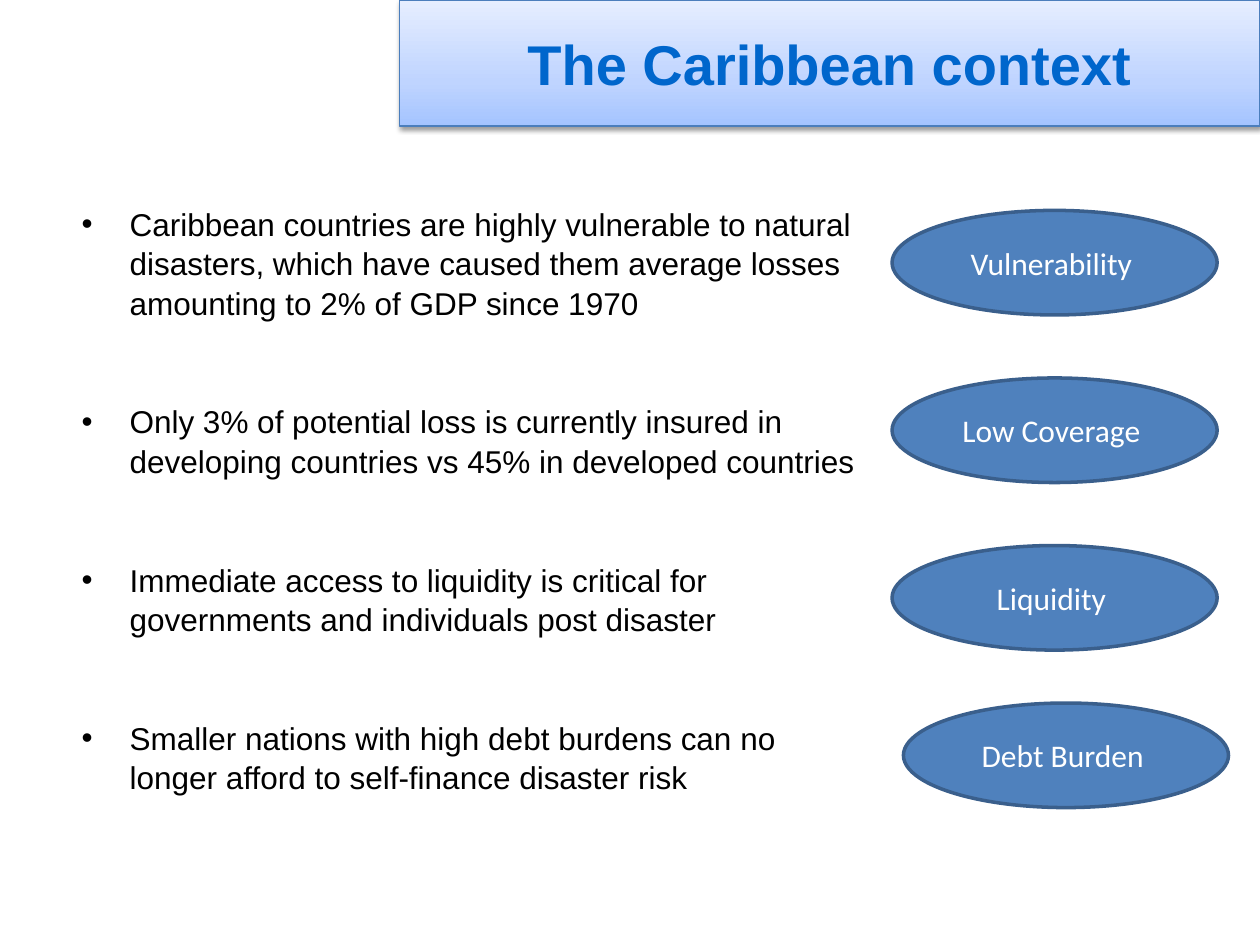
from lxml import etree
from pptx import Presentation
from pptx.dml.color import RGBColor
from pptx.enum.shapes import MSO_SHAPE
from pptx.enum.text import MSO_ANCHOR, PP_ALIGN
from pptx.oxml import parse_xml
from pptx.oxml.ns import nsdecls, qn
from pptx.util import Inches, Pt

TITLE_BLUE = RGBColor(0x00, 0x66, 0xCC)
BANNER_LINE = RGBColor(0x4B, 0x7E, 0xBC)
BANNER_STOPS = [(0, "A4C4FF"), (35, "BFD4FF"), (100, "E6EEFF")]
OVAL_FILL = RGBColor(0x4F, 0x81, 0xBD)
OVAL_LINE = RGBColor(0x3A, 0x5F, 0x8C)
WHITE = RGBColor(0xFF, 0xFF, 0xFF)
BLACK = RGBColor(0x00, 0x00, 0x00)

POINTS = [
    "Caribbean countries are highly vulnerable to natural disasters, "
    "which have caused them average losses amounting to 2% of GDP since 1970",
    "Only 3% of potential loss is currently insured in developing countries "
    "vs 45% in developed countries",
    "Immediate access to liquidity is critical for governments and "
    "individuals post disaster",
    "Smaller nations with high debt burdens can no longer afford to "
    "self-finance disaster risk",
]
# Label, left and top of each oval
THEMES = [
    ("Vulnerability", 7.08, 1.67),
    ("Low Coverage", 7.08, 3),
    ("Liquidity", 7.08, 4.33),
    ("Debt Burden", 7.17, 5.58),
]


def style_run(p, font, size, color, bold=False):
    f = p.runs[0].font
    f.name, f.size, f.bold = font, Pt(size), bold
    f.color.rgb = color


def add_banner(s, text, left, top, width, height):
    sp = s.shapes.add_shape(MSO_SHAPE.RECTANGLE, Inches(left), Inches(top),
                            Inches(width), Inches(height))
    sp.line.color.rgb = BANNER_LINE
    sp.line.width = Pt(0.75)

    # Upward gradient and soft drop shadow
    stops = "".join(f'<a:gs pos="{pos * 1000}"><a:srgbClr val="{color}"/></a:gs>'
                    for pos, color in BANNER_STOPS)
    sp_pr = sp._element.spPr
    sp_pr.find(qn("a:prstGeom")).addnext(parse_xml(
        f'<a:gradFill {nsdecls("a")} rotWithShape="1"><a:gsLst>{stops}</a:gsLst>'
        '<a:lin ang="16200000" scaled="0"/></a:gradFill>'))
    sp_pr.append(parse_xml(
        f'<a:effectLst {nsdecls("a")}><a:outerShdw blurRad="{Pt(3.1)}" '
        f'dist="{Pt(1.6)}" dir="5400000" rotWithShape="0">'
        '<a:srgbClr val="000000"><a:alpha val="38000"/></a:srgbClr>'
        '</a:outerShdw></a:effectLst>'))

    tf = sp.text_frame
    tf.text = text
    tf.vertical_anchor = MSO_ANCHOR.MIDDLE
    p = tf.paragraphs[0]
    p.alignment = PP_ALIGN.CENTER
    style_run(p, "Arial", 32, TITLE_BLUE, bold=True)


def add_points(s, points, left, top, width, height):
    box = s.shapes.add_textbox(Inches(left), Inches(top),
                               Inches(width), Inches(height))
    tf = box.text_frame
    tf.word_wrap = True
    for i, text in enumerate(points):
        p = tf.paragraphs[0] if i == 0 else tf.add_paragraph()
        p.text = text
        p.line_spacing = 1.05
        if i:
            p.space_before = Pt(45)
        # Hanging bullet
        p_pr = p._p.get_or_add_pPr()
        p_pr.set("marL", str(Inches(0.38)))
        p_pr.set("indent", str(-Inches(0.38)))
        etree.SubElement(p_pr, qn("a:buFont")).set("typeface", "Arial")
        etree.SubElement(p_pr, qn("a:buChar")).set("char", "•")
        style_run(p, "Arial", 18, BLACK)


def add_oval(s, text, left, top, width, height):
    sp = s.shapes.add_shape(MSO_SHAPE.OVAL, Inches(left), Inches(top),
                            Inches(width), Inches(height))
    sp.shadow.inherit = False
    sp.fill.solid()
    sp.fill.fore_color.rgb = OVAL_FILL
    sp.line.color.rgb = OVAL_LINE
    sp.line.width = Pt(2)
    tf = sp.text_frame
    tf.text = text
    tf.margin_right = Inches(0.15)
    tf.vertical_anchor = MSO_ANCHOR.MIDDLE
    p = tf.paragraphs[0]
    p.alignment = PP_ALIGN.CENTER
    style_run(p, "Calibri", 18, WHITE)


def main():
    prs = Presentation()
    prs.slide_width, prs.slide_height = Inches(10), Inches(7.5)
    s = prs.slides.add_slide(prs.slide_layouts[6])
    add_banner(s, "The Caribbean context", 3.17, 0, 6.83, 1)
    add_points(s, POINTS, 0.55, 1.56, 6.38, 5.43)
    for label, left, top in THEMES:
        add_oval(s, label, left, top, 2.58, 0.83)
    prs.save("out.pptx")


if __name__ == "__main__":
    main()
